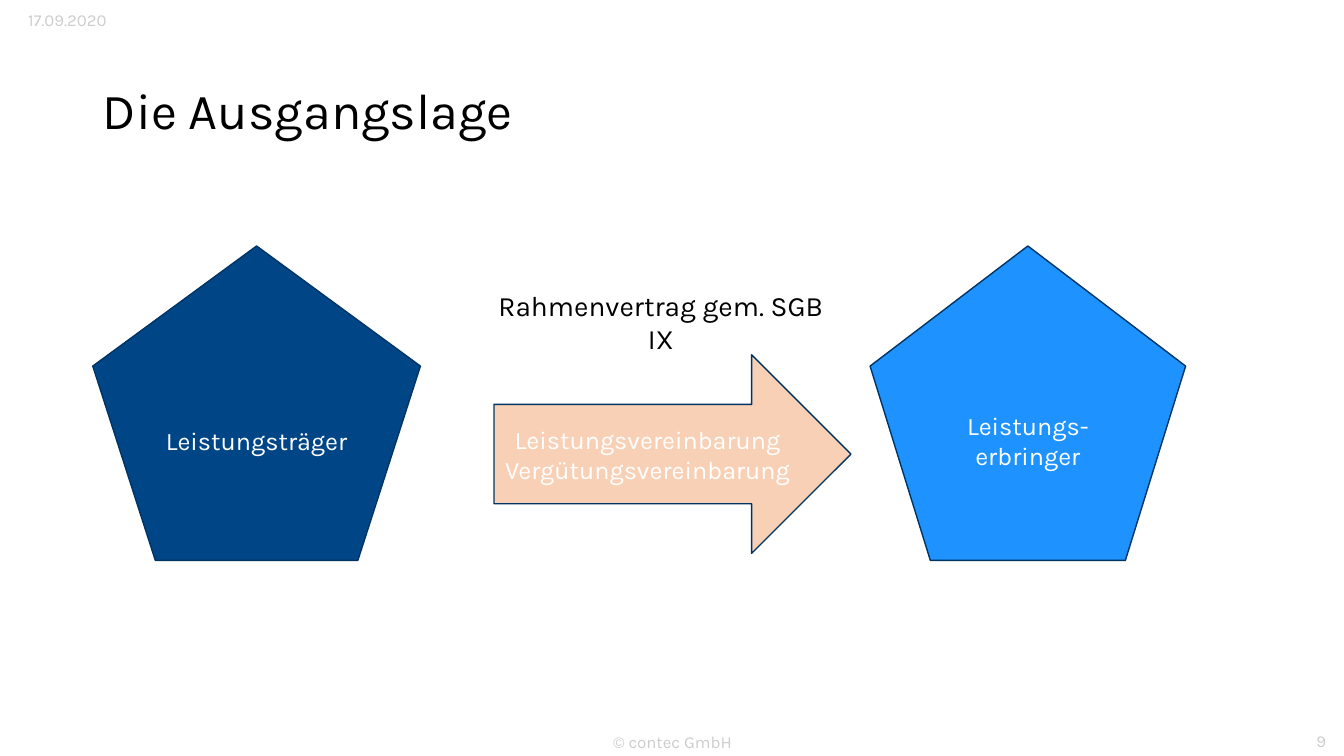
import pptx
import pptx.util
import pptx.dml.color
import pptx.enum.shapes
import pptx.enum.text

Inches = pptx.util.Inches
Pt = pptx.util.Pt
RGBColor = pptx.dml.color.RGBColor
Kind = pptx.enum.shapes.MSO_SHAPE
Align = pptx.enum.text.PP_ALIGN
Anchor = pptx.enum.text.MSO_ANCHOR

FONT = "Karla"
BLACK = RGBColor(0x00, 0x00, 0x00)
WHITE = RGBColor(0xFF, 0xFF, 0xFF)
GREY = RGBColor(0xCC, 0xCC, 0xCC)
NAVY = RGBColor(0x00, 0x46, 0x87)
BLUE = RGBColor(0x1E, 0x93, 0xFF)
PEACH = RGBColor(0xF8, 0xD0, 0xB5)
EDGE = RGBColor(0x00, 0x34, 0x64)


def write(shape, lines, size, color, align, anchor):
    frame = shape.text_frame
    frame.word_wrap = True
    frame.vertical_anchor = anchor
    frame.text = "\n".join(lines)
    for para in frame.paragraphs:
        para.alignment = align
        para.font.name = FONT
        para.font.size = Pt(size)
        para.font.color.rgb = color


def add_label(slide, box, text, size, color, align, anchor):
    label = slide.shapes.add_textbox(*map(Inches, box))
    write(label, [text], size, color, align, anchor)


def add_block(slide, kind, box, fill, lines):
    block = slide.shapes.add_shape(kind, *map(Inches, box))
    block.shadow.inherit = False
    block.fill.solid()
    block.fill.fore_color.rgb = fill
    block.line.color.rgb = EDGE
    block.line.width = Pt(1)
    write(block, lines, 18, WHITE, Align.CENTER, Anchor.MIDDLE)


def add_title(slide, box, text):
    title = slide.shapes.title
    title.left, title.top, title.width, title.height = map(Inches, box)
    write(title, [text], 36, BLACK, Align.LEFT, Anchor.MIDDLE)
    title.text_frame.paragraphs[0].line_spacing = 0.9


def add_margins(slide):
    """Place the date, the copyright line and the page number."""
    for box, text, align, anchor in (
        ((0.18, 0.05, 1.48, 0.3), "17.09.2020", Align.LEFT, Anchor.TOP),
        ((4.42, 7.16, 4.5, 0.4), "© contec GmbH", Align.CENTER, Anchor.MIDDLE),
        ((12.67, 7.15, 0.58, 0.4), "9", Align.RIGHT, Anchor.MIDDLE),
    ):
        add_label(slide, box, text, 12, GREY, align, anchor)


def add_scheme(slide, left, top):
    """Place the two parties and the contract arrow between them."""
    add_block(slide, Kind.REGULAR_PENTAGON, (left, top, 3.25, 3.12),
              NAVY, ["Leistungsträger"])
    add_block(slide, Kind.REGULAR_PENTAGON, (left + 7.71, top, 3.13, 3.12),
              BLUE, ["Leistungs-erbringer"])
    add_block(slide, Kind.RIGHT_ARROW, (left + 3.98, top + 1.08, 3.54, 1.97),
              PEACH, ["Leistungsvereinbarung", "Vergütungsvereinbarung"])
    add_label(slide, (left + 3.84, top + 0.37, 3.59, 0.44),
              "Rahmenvertrag gem. SGB IX", 20, BLACK, Align.CENTER, Anchor.TOP)


def main():
    deck = pptx.Presentation()
    deck.slide_width = Inches(13.33)
    deck.slide_height = Inches(7.5)
    slide = deck.slides.add_slide(deck.slide_layouts[5])
    add_title(slide, (0.92, 0.4, 11.5, 1.45), "Die Ausgangslage")
    add_margins(slide)
    add_scheme(slide, 0.92, 2.44)
    deck.save("out.pptx")


if __name__ == "__main__":
    main()
